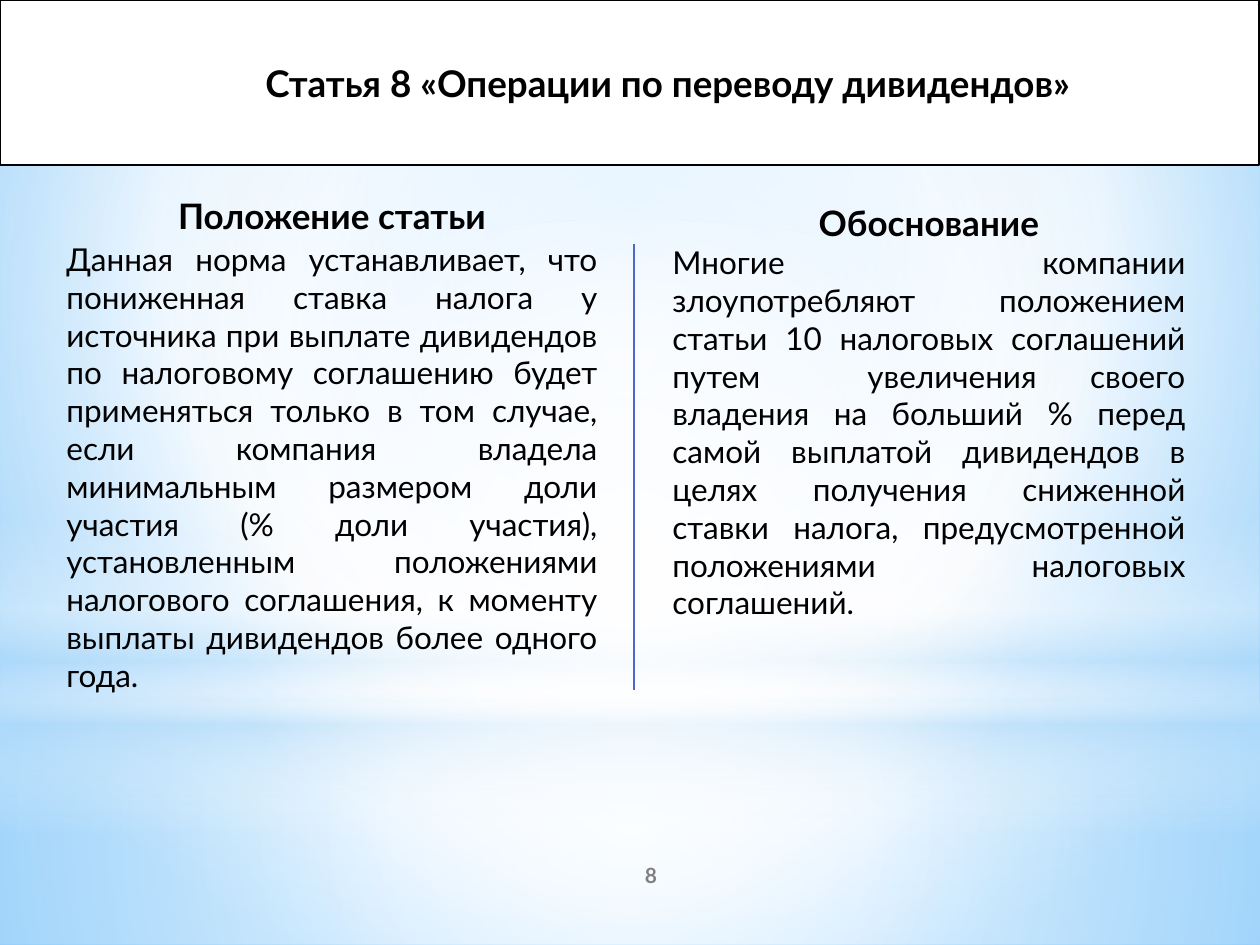
import dataclasses

import lxml.etree as etree
import pptx
import pptx.dml.color
import pptx.enum.shapes
import pptx.enum.text
import pptx.oxml.ns
import pptx.util

PX = 914400 / 126
WIDTH, HEIGHT = 1260, 945
qn = pptx.oxml.ns.qn
Kind = pptx.enum.shapes.MSO_SHAPE
Align = pptx.enum.text.PP_ALIGN
Anchor = pptx.enum.text.MSO_ANCHOR
Fit = pptx.enum.text.MSO_AUTO_SIZE


@dataclasses.dataclass(frozen=True)
class Theme:
    font: str = "Lato"
    ink: str = "000000"
    white: str = "FFFFFF"
    pale: str = "B4DCFA"
    sky: str = "9ED5FF"
    deep: str = "5BB9FF"
    rule: str = "4E67C8"
    grey: str = "808080"
    title: int = 21
    head: int = 20
    body: int = 18
    small: int = 12


def emu(*sizes):
    return [pptx.util.Emu(round(size * PX)) for size in sizes]


def rgb(code):
    return pptx.dml.color.RGBColor.from_string(code)


def blend(fill, node, stops, focus=(50, 50, 50, 50), angle=None):
    """Fill with (place, colour, opacity) stops, round a focus or along an angle."""
    fill.solid()
    old = node.find(".//" + qn("a:solidFill"))
    grad = etree.Element(qn("a:gradFill"), rotWithShape="1")
    steps = etree.SubElement(grad, qn("a:gsLst"))
    for place, code, alpha in stops:
        stop = etree.SubElement(steps, qn("a:gs"), pos=str(place * 1000))
        tint = etree.SubElement(stop, qn("a:srgbClr"), val=code)
        if alpha < 100:
            etree.SubElement(tint, qn("a:alpha"), val=str(alpha * 1000))
    if angle is None:
        way = etree.SubElement(grad, qn("a:path"), {"path": "circle"})
        sides = {side: str(part * 1000) for side, part in zip("ltrb", focus)}
        etree.SubElement(way, qn("a:fillToRect"), sides)
    else:
        etree.SubElement(grad, qn("a:lin"), ang=str(angle * 60000), scaled="0")
    old.getparent().replace(old, grad)


def write(para, text, font, size, color, bold=False, align=Align.CENTER, before=0):
    para.alignment = align
    para.space_before = pptx.util.Pt(before)
    run = para.add_run()
    run.text = text
    run.font.name = font
    run.font.size = pptx.util.Pt(size)
    run.font.bold = bold
    run.font.color.rgb = rgb(color)


class Page:
    def __init__(self, slide, theme):
        self.slide = slide
        self.theme = theme

    def back(self, stops, focus):
        blend(self.slide.background.fill, self.slide.element, stops, focus)

    def shape(self, kind, box):
        shape = self.slide.shapes.add_shape(kind, *emu(*box))
        shape.shadow.inherit = False
        shape.line.fill.background()
        return shape

    def glow(self, kind, box, stops, angle=None):
        shape = self.shape(kind, box)
        blend(shape.fill, shape.element, stops, angle=angle)

    def title(self, box, text, inset):
        shape = self.shape(Kind.RECTANGLE, box)
        shape.fill.solid()
        shape.fill.fore_color.rgb = rgb(self.theme.white)
        shape.line.color.rgb = rgb(self.theme.ink)
        shape.line.width = pptx.util.Pt(1.25)
        frame = shape.text_frame
        frame.vertical_anchor = Anchor.MIDDLE
        frame.margin_left = emu(inset)[0]
        write(frame.paragraphs[0], text, self.theme.font, self.theme.title,
              self.theme.ink, bold=True)

    def frame(self, box, anchor=Anchor.MIDDLE, fit=Fit.NONE):
        frame = self.slide.shapes.add_textbox(*emu(*box)).text_frame
        frame.word_wrap = True
        frame.auto_size = fit
        frame.vertical_anchor = anchor
        return frame

    def column(self, box, head, body, before=0, **form):
        frame = self.frame(box, **form)
        look = self.theme
        write(frame.paragraphs[0], head, look.font, look.head, look.ink,
              bold=True, before=before)
        write(frame.add_paragraph(), body, look.font, look.body, look.ink,
              align=Align.JUSTIFY, before=before)

    def number(self, box, text):
        look = self.theme
        write(self.frame(box).paragraphs[0], text, look.font, look.small,
              look.grey, bold=True)

    def line(self, *ends):
        straight = pptx.enum.shapes.MSO_CONNECTOR.STRAIGHT
        line = self.slide.shapes.add_connector(straight, *emu(*ends))
        line.line.color.rgb = rgb(self.theme.rule)
        line.line.width = pptx.util.Pt(0.75)
        etree.SubElement(line.element.spPr, qn("a:effectLst"))


def main():
    deck = pptx.Presentation()
    deck.slide_width, deck.slide_height = emu(WIDTH, HEIGHT)
    look = Theme()
    page = Page(deck.slides.add_slide(deck.slide_layouts[6]), look)
    white, pale = look.white, look.pale

    page.back([(0, look.sky, 100), (60, white, 100), (100, look.deep, 100)],
              (20, 10, 20, 60))
    split = 703
    page.glow(Kind.RECTANGLE, (0, split, WIDTH, HEIGHT - split),
              [(0, white, 91), (37, white, 76), (100, pale, 79)])
    page.glow(Kind.RECTANGLE, (0, 0, WIDTH, split),
              [(0, white, 89), (48, white, 62), (100, pale, 79)])
    page.glow(Kind.RECTANGLE, (0, 519, WIDTH, 315),
              [(0, white, 0), (29, white, 30), (45, pale, 40),
               (55, white, 26), (65, pale, 60), (100, white, 0)], angle=90)
    page.glow(Kind.OVAL, (0, 220, WIDTH, split),
              [(0, white, 100), (56, white, 0)])

    page.title((0, 0, 1259, 165), "Статья 8 «Операции по переводу дивидендов»",
               inset=89)
    page.column(
        (54, 149, 556, 590), "Положение статьи",
        "Данная норма устанавливает, что пониженная ставка налога у источника "
        "при выплате дивидендов по налоговому соглашению будет применяться "
        "только в том случае, если компания владела минимальным размером доли "
        "участия (% доли участия), установленным положениями налогового "
        "соглашения, к моменту выплаты дивидендов более одного года.",
        before=2)
    page.column(
        (660, 195, 538, 398), "Обоснование",
        "Многие компании злоупотребляют положением статьи 10 налоговых "
        "соглашений путем  увеличения своего владения на больший % перед самой "
        "выплатой дивидендов в целях получения сниженной ставки налога, "
        "предусмотренной положениями налоговых соглашений.",
        anchor=Anchor.TOP, fit=Fit.SHAPE_TO_FIT_TEXT)
    page.line(634, 244, 634, 690)
    page.number((525, 850, 252, 50), "8")
    deck.save("out.pptx")


if __name__ == "__main__":
    main()
